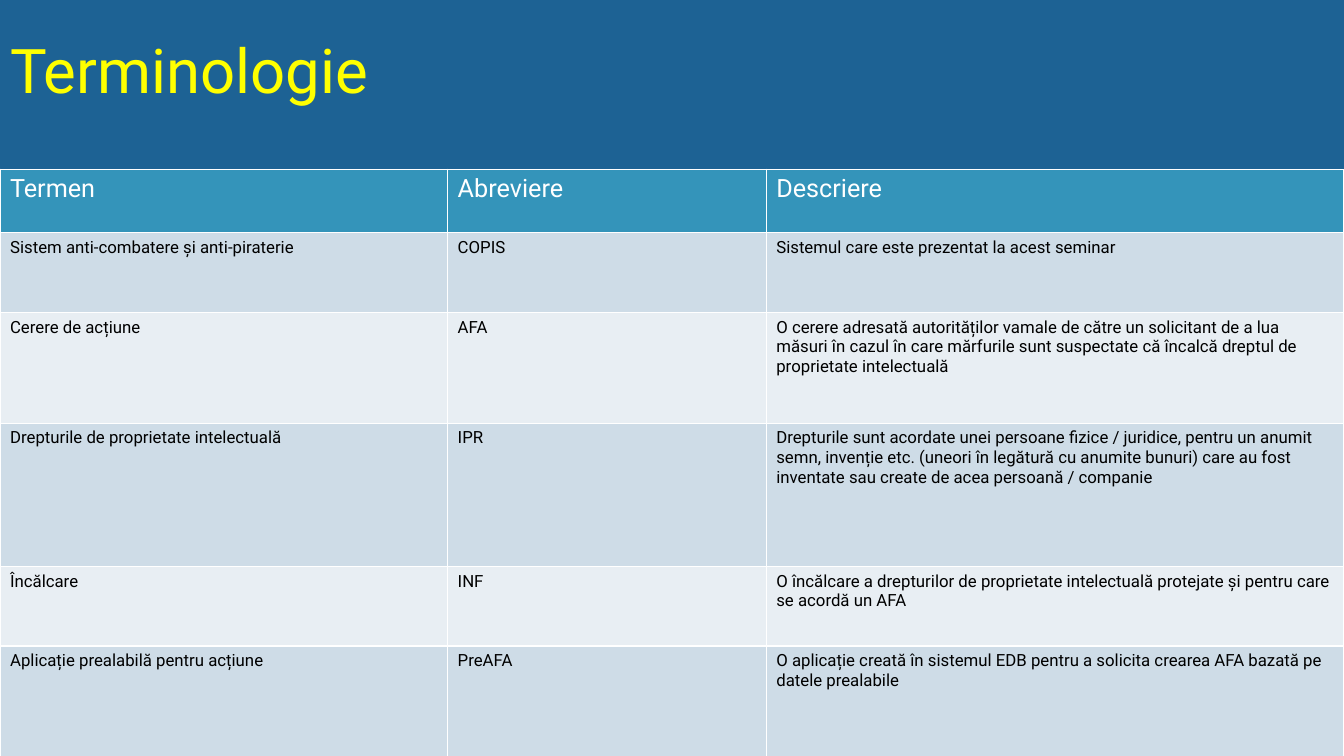
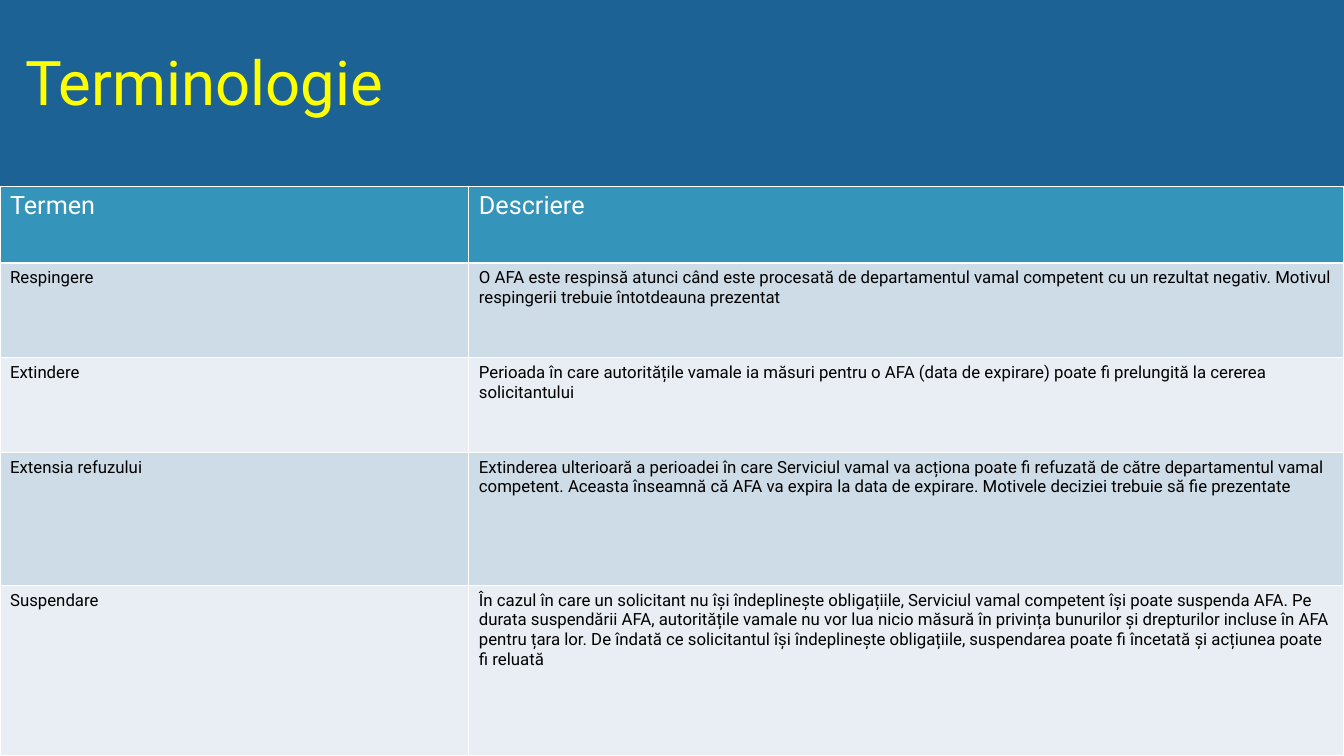
from lxml.etree import SubElement
from pptx import Presentation
from pptx.dml.color import RGBColor
from pptx.enum.text import MSO_ANCHOR, PP_ALIGN
from pptx.oxml.ns import qn
from pptx.util import Inches, Pt

FONT = "Roboto"
NAVY, YELLOW, WHITE, BLACK = "1D6294", "FFFF00", "FFFFFF", "000000"
HEADER_FILL = "3494BA"
BAND_FILLS = ("CEDCE7", "E8EEF3")
SLIDE_WIDTH, SLIDE_HEIGHT = 13.33, 7.5
TITLE_ONLY_LAYOUT = 5

ABBREVIATIONS = [
    ("Termen", "Abreviere", "Descriere"),
    ("Sistem anti-combatere și anti-piraterie", "COPIS",
     "Sistemul care este prezentat la acest seminar"),
    ("Cerere de acțiune", "AFA",
     "O cerere adresată autorităților vamale de către un solicitant de a lua măsuri "
     "în cazul în care mărfurile sunt suspectate că încalcă dreptul de proprietate "
     "intelectuală"),
    ("Drepturile de proprietate intelectuală", "IPR",
     "Drepturile sunt acordate unei persoane fizice / juridice, pentru un anumit semn, "
     "invenție etc. (uneori în legătură cu anumite bunuri) care au fost inventate sau "
     "create de acea persoană / companie"),
    ("Încălcare", "INF",
     "O încălcare a drepturilor de proprietate intelectuală protejate și pentru care "
     "se acordă un AFA"),
    ("Aplicație prealabilă pentru acțiune", "PreAFA",
     "O aplicație creată în sistemul EDB pentru a solicita crearea AFA bazată pe "
     "datele prealabile"),
]

DECISIONS = [
    ("Termen", "Descriere"),
    ("Respingere",
     "O AFA este respinsă atunci când este procesată de departamentul vamal competent "
     "cu un rezultat negativ. Motivul respingerii trebuie întotdeauna prezentat"),
    ("Extindere",
     "Perioada în care autoritățile vamale ia măsuri pentru o AFA (data de expirare) "
     "poate fi prelungită la cererea solicitantului"),
    ("Extensia refuzului",
     "Extinderea ulterioară a perioadei în care Serviciul vamal va acționa poate fi "
     "refuzată de către departamentul vamal competent. Aceasta înseamnă că AFA va "
     "expira la data de expirare. Motivele deciziei trebuie să fie prezentate"),
    ("Suspendare",
     "În cazul în care un solicitant nu își îndeplinește obligațiile, Serviciul vamal "
     "competent își poate suspenda AFA. Pe durata suspendării AFA, autoritățile vamale "
     "nu vor lua nicio măsură în privința bunurilor și drepturilor incluse în AFA "
     "pentru țara lor. De îndată ce solicitantul își îndeplinește obligațiile, "
     "suspendarea poate fi încetată și acțiunea poate fi reluată"),
]


def set_fill(fill, color):
    """Make a fill solid in the given hex colour."""
    fill.solid()
    fill.fore_color.rgb = RGBColor.from_string(color)


def write_text(text_frame, text, size=12, color=BLACK, line_spacing=1.0):
    """Write one left-aligned paragraph in the deck font."""
    paragraph = text_frame.paragraphs[0]
    paragraph.alignment = PP_ALIGN.LEFT
    paragraph.line_spacing = line_spacing
    run = paragraph.add_run()
    run.text = text
    run.font.name = FONT
    run.font.size = Pt(size)
    run.font.bold = False
    set_fill(run.font.fill, color)


def add_borders(cell, color=WHITE, width=1):
    """Draw a line on all four sides of a table cell."""
    properties = cell._tc.get_or_add_tcPr()
    for side in ("a:lnL", "a:lnR", "a:lnT", "a:lnB"):
        line = SubElement(properties, qn(side), w=str(Pt(width)))
        solid_fill = SubElement(line, qn("a:solidFill"))
        SubElement(solid_fill, qn("a:srgbClr"), val=color)


def add_title(slide, text, left, top):
    """Place and format the slide title."""
    title = slide.shapes.title
    title.left, title.top = Inches(left), Inches(top)
    title.width, title.height = Inches(11.5), Inches(1.45)
    title.text_frame.vertical_anchor = MSO_ANCHOR.MIDDLE
    write_text(title.text_frame, text, size=44, color=YELLOW, line_spacing=0.9)


def add_terms_table(slide, rows, top, column_widths, row_heights):
    """Add a full-width table with a header row and banded body rows."""
    frame = slide.shapes.add_table(
        len(rows), len(column_widths), Inches(0), Inches(top),
        Inches(SLIDE_WIDTH), Inches(SLIDE_HEIGHT - top))
    table = frame.table
    for column, width in zip(table.columns, column_widths):
        column.width = Inches(width)
    for index, (row, height, texts) in enumerate(zip(table.rows, row_heights, rows)):
        row.height = Inches(height)
        is_header = index == 0
        fill = HEADER_FILL if is_header else BAND_FILLS[(index - 1) % 2]
        style = {"size": 18, "color": WHITE} if is_header else {}
        for cell, text in zip(row.cells, texts):
            add_borders(cell)
            set_fill(cell.fill, fill)
            write_text(cell.text_frame, text, **style)


def add_terms_slide(presentation, title_left, title_top, **table):
    """Add a terminology slide with its title and table."""
    slide = presentation.slides.add_slide(presentation.slide_layouts[TITLE_ONLY_LAYOUT])
    add_title(slide, "Terminologie", title_left, title_top)
    add_terms_table(slide, **table)


def main():
    """Build and save the presentation."""
    presentation = Presentation()
    presentation.slide_width = Inches(SLIDE_WIDTH)
    presentation.slide_height = Inches(SLIDE_HEIGHT)
    set_fill(presentation.slide_master.background.fill, NAVY)
    add_terms_slide(
        presentation, 0, 0, rows=ABBREVIATIONS, top=1.68,
        column_widths=(4.44, 3.16, 5.73),
        row_heights=(0.63, 0.79, 1.1, 1.42, 0.79, 1.1))
    add_terms_slide(
        presentation, 0.15, 0.12, rows=DECISIONS, top=1.85,
        column_widths=(4.65, 8.68),
        row_heights=(0.76, 0.94, 0.94, 1.32, 1.69))
    presentation.save("out.pptx")


if __name__ == "__main__":
    main()
